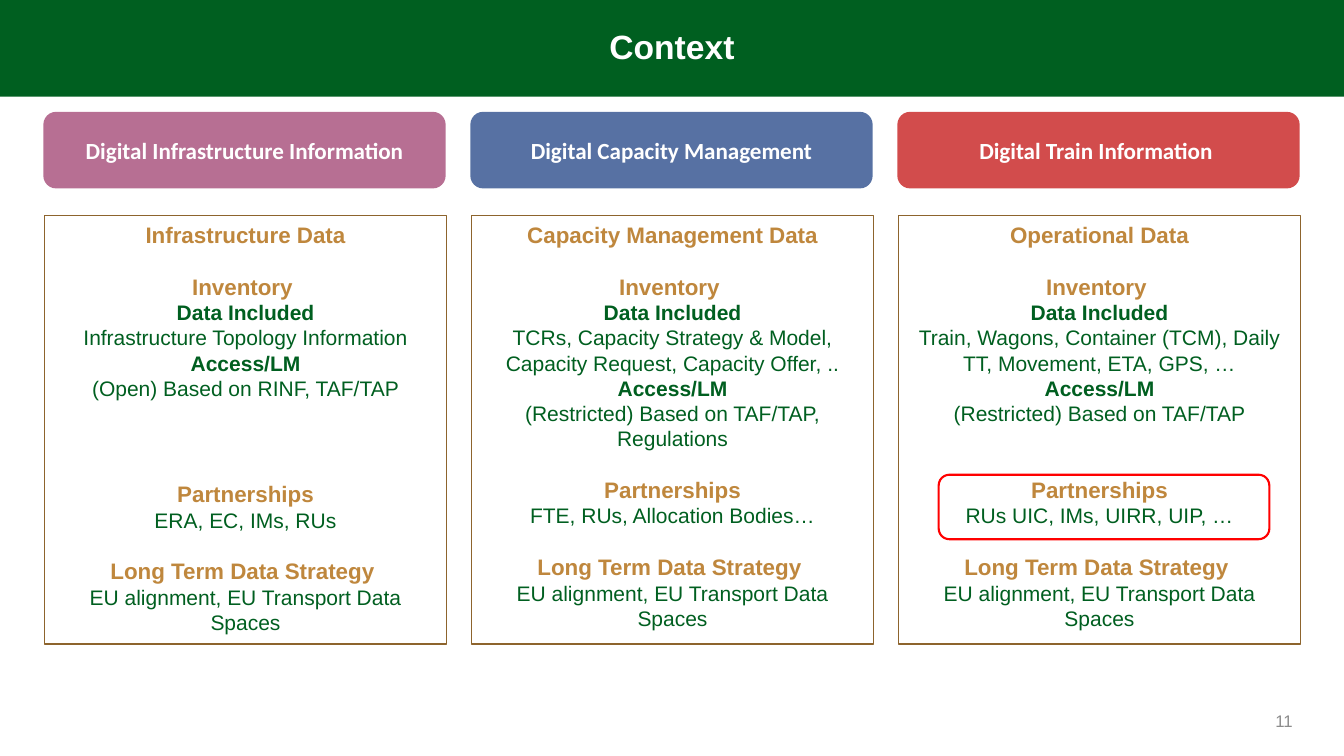
from lxml import etree
from pptx import Presentation
from pptx.dml.color import RGBColor
from pptx.enum.shapes import MSO_SHAPE
from pptx.enum.text import MSO_ANCHOR, MSO_AUTO_SIZE, PP_ALIGN
from pptx.oxml.ns import qn
from pptx.util import Inches, Pt

ROUNDED = MSO_SHAPE.ROUNDED_RECTANGLE
TOP, MIDDLE = MSO_ANCHOR.TOP, MSO_ANCHOR.MIDDLE
CENTER, RIGHT = PP_ALIGN.CENTER, PP_ALIGN.RIGHT
NO_AUTOFIT = MSO_AUTO_SIZE.NONE
GREEN, GOLD, BROWN, WHITE, RED = "005F20", "BF873D", "8D642D", "FFFFFF", "FF0000"
TITLE_ONLY = 5


def color(value):
    return RGBColor.from_string(value)


def write(frame, text, size=15, ink=GREEN, bold=False, font="Arial",
          align=CENTER, anchor=MIDDLE, spacing=1.0, before=0):
    frame.word_wrap = True
    frame.auto_size = NO_AUTOFIT
    frame.vertical_anchor = anchor
    para = frame.add_paragraph() if frame.text else frame.paragraphs[0]
    para.alignment = align
    para.line_spacing = spacing
    para.space_before = Pt(before)
    para.space_after = Pt(0)
    span = para.add_run()
    span.text = text
    span.font.name = font
    span.font.size = Pt(size)
    span.font.bold = bold
    span.font.color.rgb = color(ink)


deck = Presentation()
deck.slide_width = Inches(13.33)
deck.slide_height = Inches(7.5)
page = deck.slides.add_slide(deck.slide_layouts[TITLE_ONLY])

title = page.shapes.title
title.left, title.top = Inches(0), Inches(0)
title.width, title.height = Inches(13.33), Inches(0.96)
title.fill.solid()
title.fill.fore_color.rgb = color(GREEN)
write(title.text_frame, "Context", size=24, ink=WHITE, bold=True, spacing=0.9)

columns = [
    ("Digital Infrastructure Information", "993366", "Infrastructure Data",
     "Infrastructure Topology Information",
     "(Open) Based on RINF, TAF/TAP", "ERA, EC, IMs, RUs", 57),
    ("Digital Capacity Management", "10367D", "Capacity Management Data",
     "TCRs, Capacity Strategy & Model, Capacity Request, Capacity Offer, ..",
     "(Restricted) Based on TAF/TAP, Regulations", "FTE, RUs, Allocation Bodies…", 18),
    ("Digital Train Information ", "C00000", "Operational Data",
     "Train, Wagons, Container (TCM), Daily TT, Movement, ETA, GPS, …",
     "(Restricted) Based on TAF/TAP", "RUs UIC, IMs, UIRR, UIP, …", 36),
]
heading = {"size": 16, "ink": GOLD, "bold": True}
label = {"bold": True}

for index, (pillar, tint, topic, data, access, partners, gap) in enumerate(columns):
    left = 0.43 + index * 4.235

    header = page.shapes.add_shape(ROUNDED, Inches(left), Inches(1.11), Inches(3.99), Inches(0.76))
    header.shadow.inherit = False
    header.fill.solid()
    header.fill.fore_color.rgb = color(tint)
    fill_color = header.fill._xPr.find(qn("a:solidFill"))[0]
    etree.SubElement(fill_color, qn("a:alpha"), val="70000")
    header.line.fill.background()
    write(header.text_frame, pillar, size=16.5, ink=WHITE, bold=True, font="Calibri")

    box = page.shapes.add_shape(ROUNDED, Inches(left + 0.01), Inches(2.14), Inches(3.99), Inches(4.25))
    box.adjustments[0] = 0
    box.shadow.inherit = False
    box.fill.background()
    box.line.color.rgb = color(BROWN)
    box.line.width = Pt(1)
    for text, style, before in [
        (topic, heading, 0),
        ("Inventory ", heading, 18),
        ("Data Included", label, 0),
        (data, {}, 0),
        ("Access/LM", label, 0),
        (access, {}, 0),
        ("Partnerships", heading, gap),
        (partners, {}, 0),
        ("Long Term Data Strategy ", heading, 18),
        ("EU alignment, EU Transport Data Spaces", {}, 0),
    ]:
        write(box.text_frame, text, anchor=TOP, before=before, **style)

highlight = page.shapes.add_shape(ROUNDED, Inches(9.31), Inches(4.71), Inches(3.28), Inches(0.64))
highlight.shadow.inherit = False
highlight.fill.background()
highlight.line.color.rgb = color(RED)
highlight.line.width = Pt(1.5)

number = page.shapes.add_textbox(Inches(9.92), Inches(6.95), Inches(3), Inches(0.4))
write(number.text_frame, "11", size=12, ink="8C8C8C", align=RIGHT)

deck.save("out.pptx")
